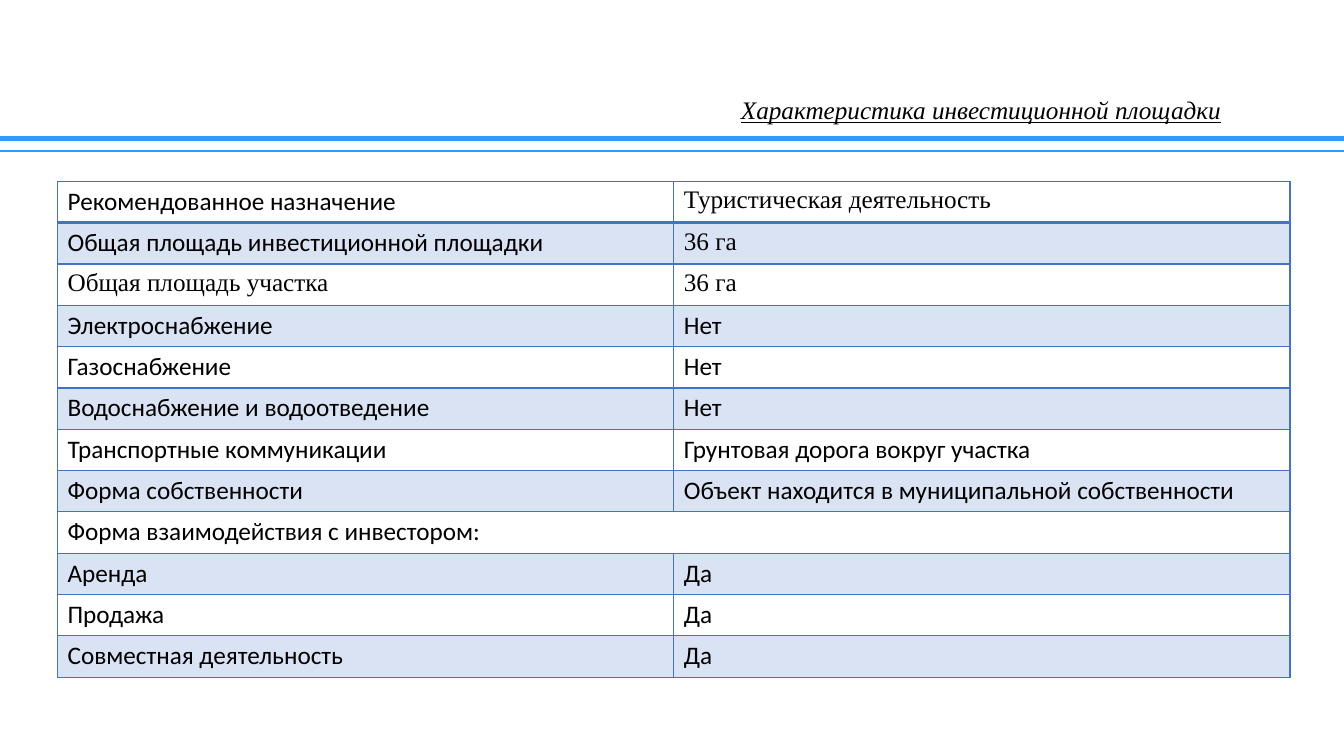
from dataclasses import dataclass

from lxml import etree
from pptx import Presentation
from pptx.dml.color import RGBColor
from pptx.enum.shapes import MSO_CONNECTOR
from pptx.enum.text import MSO_ANCHOR, MSO_AUTO_SIZE, PP_ALIGN
from pptx.oxml.ns import qn
from pptx.util import Cm, Pt

STRAIGHT = MSO_CONNECTOR.STRAIGHT
MIDDLE = MSO_ANCHOR.MIDDLE
NO_AUTOFIT = MSO_AUTO_SIZE.NONE
LEFT, CENTER = PP_ALIGN.LEFT, PP_ALIGN.CENTER
TITLE_ONLY = 5


@dataclass(frozen=True)
class Theme:
    """Colours, fonts and sizes of the slide."""

    text: str = "000000"
    rule: str = "3399FF"
    border: str = "4472C4"
    band: str = "DAE3F3"
    sans: str = "Calibri"
    serif: str = "Times New Roman"
    size: int = 18


THEME = Theme()
SERIF_CELLS = {(0, 1), (1, 1), (2, 0), (2, 1)}
SITE_ROWS = [
    ("Рекомендованное назначение", "Туристическая деятельность"),
    ("Общая площадь инвестиционной площадки", "36 га"),
    ("Общая площадь участка", "36 га"),
    ("Электроснабжение", "Нет"),
    ("Газоснабжение", "Нет"),
    ("Водоснабжение и водоотведение", "Нет"),
    ("Транспортные коммуникации", "Грунтовая дорога вокруг участка"),
    ("Форма собственности", "Объект находится в муниципальной собственности"),
    ("Форма взаимодействия с инвестором:",),
    ("Аренда", "Да"),
    ("Продажа", "Да"),
    ("Совместная деятельность", "Да"),
]


def write_text(text_frame, text, font=THEME.sans, align=LEFT, spacing=None,
               italic=False, underline=False):
    """Write one formatted paragraph into a text frame."""
    paragraph = text_frame.paragraphs[0]
    paragraph.alignment = align
    paragraph.line_spacing = spacing
    run = paragraph.add_run()
    run.text = text
    run.font.name = font
    run.font.size = Pt(THEME.size)
    run.font.bold = False
    run.font.italic = italic
    run.font.underline = underline
    run.font.color.rgb = RGBColor.from_string(THEME.text)


def add_title(slide, text, left, top, width, height):
    """Place the slide title in the given box."""
    title = slide.shapes.title
    title.left, title.top, title.width, title.height = left, top, width, height
    title.text_frame.vertical_anchor = MIDDLE
    title.text_frame.auto_size = NO_AUTOFIT
    write_text(title.text_frame, text, font=THEME.serif, align=CENTER,
               spacing=0.9, italic=True, underline=True)


def add_double_rule(slide, left, top, width, gap):
    """Draw a thick rule with a thin one a gap below it."""
    for y, weight in ((top, 3.5), (top + gap, 1.5)):
        rule = slide.shapes.add_connector(STRAIGHT, left, y, left + width, y)
        rule.line.color.rgb = RGBColor.from_string(THEME.rule)
        rule.line.width = Pt(weight)
        etree.SubElement(rule._element.spPr, qn("a:effectLst"))


def set_borders(cell, top, bottom):
    """Give a cell its four borders, with top and bottom weights in points."""
    properties = cell._tc.get_or_add_tcPr()
    for side, weight in (("lnL", 1), ("lnR", 1), ("lnT", top), ("lnB", bottom)):
        line = etree.SubElement(properties, qn(f"a:{side}"), w=str(Pt(weight)))
        fill = etree.SubElement(line, qn("a:solidFill"))
        etree.SubElement(fill, qn("a:srgbClr"), val=THEME.border)


def add_site_table(slide, rows, left, top, width, height):
    """Fill the box with a two-column table banded on every second row."""
    table = slide.shapes.add_table(len(rows), 2, left, top, width, height).table
    table.first_row = False
    table.horz_banding = False
    for row_index, values in enumerate(rows):
        if len(values) == 1:
            table.cell(row_index, 0).merge(table.cell(row_index, 1))
        for column_index in range(2):
            cell = table.cell(row_index, column_index)
            set_borders(cell, top=2 if row_index == 1 else 1,
                        bottom=2 if row_index == 0 else 1)
            if row_index % 2:
                cell.fill.solid()
                cell.fill.fore_color.rgb = RGBColor.from_string(THEME.band)
            else:
                cell.fill.background()
        for column_index, value in enumerate(values):
            is_serif = (row_index, column_index) in SERIF_CELLS
            write_text(table.cell(row_index, column_index).text_frame, value,
                       font=THEME.serif if is_serif else THEME.sans)


def main():
    """Build the investment site slide and save it."""
    presentation = Presentation()
    presentation.slide_width = Cm(33.87)
    presentation.slide_height = Cm(19.05)
    slide = presentation.slides.add_slide(presentation.slide_layouts[TITLE_ONLY])
    add_double_rule(slide, 0, Cm(3.5), presentation.slide_width, Cm(0.31))
    add_title(slide, "Характеристика инвестиционной площадки",
              Cm(16.94), Cm(2.46), Cm(15.57), Cm(0.69))
    add_site_table(slide, SITE_ROWS, Cm(1.45), Cm(4.57), Cm(31.06), Cm(12.5))
    presentation.save("out.pptx")


if __name__ == "__main__":
    main()
